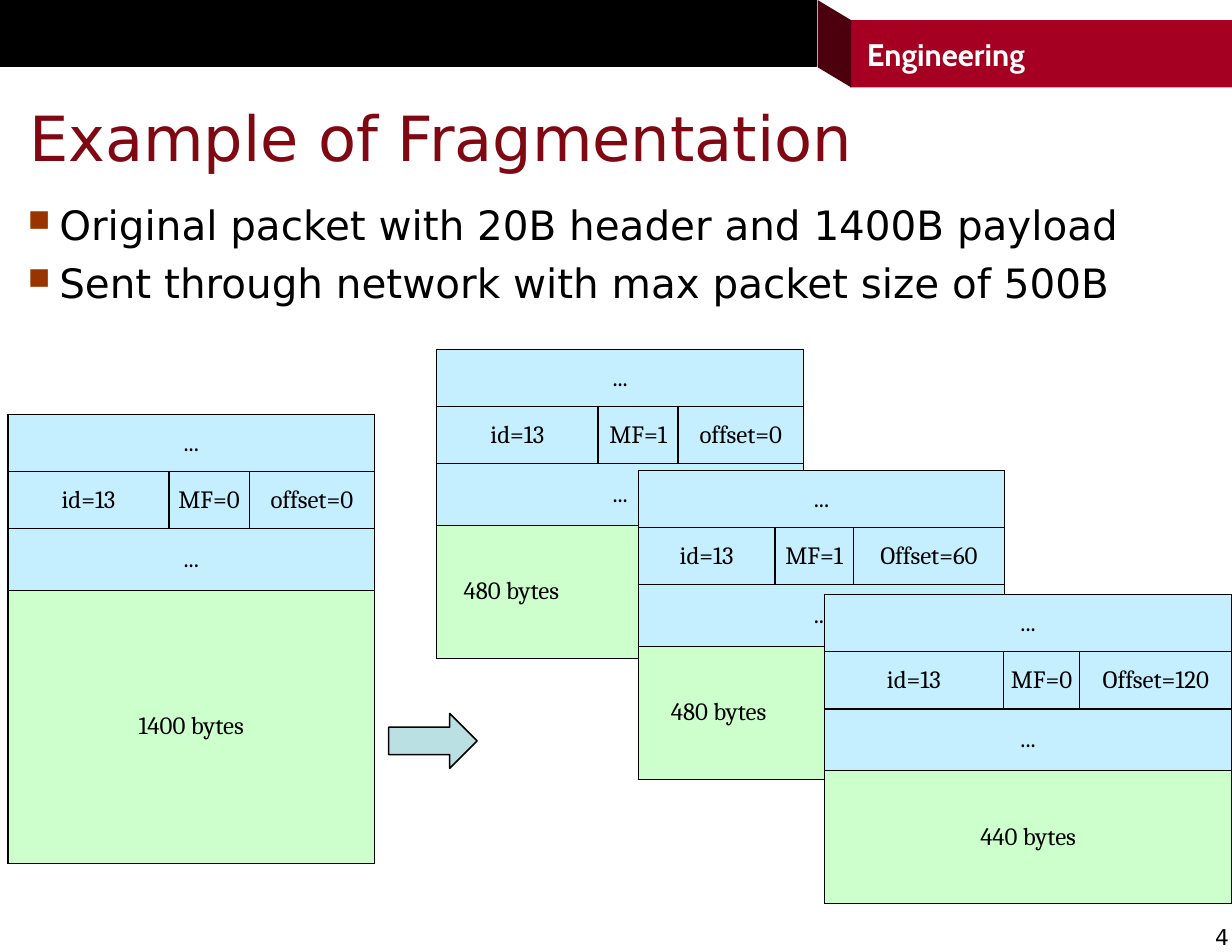
import pptx
import pptx.dml.color
import pptx.enum.shapes
import pptx.enum.text
import pptx.oxml
import pptx.oxml.ns
import pptx.util

COLUMNS, ROWS = 110, 85
SLIDE_WIDTH, SLIDE_HEIGHT = pptx.util.Inches(11), pptx.util.Inches(8.5)
BLACK, WHITE, CRIMSON, MAROON = "000000", "FFFFFF", "A50021", "4C000E"
TITLE_RED, BULLET_BROWN = "7F0813", "993300"
HEADER_BLUE, PAYLOAD_GREEN, ARROW_BLUE = "C5EEFF", "CCFFCC", "BBE0E3"
HEADER_ROWS = (5.1, 5.1, 5.5)

SHAPE = pptx.enum.shapes.MSO_SHAPE
ALIGN = pptx.enum.text.PP_ALIGN
MIDDLE = pptx.enum.text.MSO_ANCHOR.MIDDLE


def color(hex_string):
    return pptx.dml.color.RGBColor.from_string(hex_string)


def across(columns):
    return round(SLIDE_WIDTH * columns / COLUMNS)


def down(rows):
    return round(SLIDE_HEIGHT * rows / ROWS)


def place(left, top, width, height):
    return across(left), down(top), across(width), down(height)


def set_font(paragraph, name, size, hex_string, bold=False):
    font = paragraph.font
    font.name, font.size, font.bold = name, pptx.util.Pt(size), bold
    font.color.rgb = color(hex_string)


def set_margins(target, left, top, right, bottom):
    """Set the inner margins of a text frame or table cell in grid units."""
    target.margin_left, target.margin_right = across(left), across(right)
    target.margin_top, target.margin_bottom = down(top), down(bottom)


def add_preset(slide, preset, box, fill, line=None):
    shape = slide.shapes.add_shape(preset, *place(*box))
    shape.shadow.inherit = False
    shape.fill.solid()
    shape.fill.fore_color.rgb = color(fill)
    if line:
        shape.line.color.rgb = color(line)
        shape.line.width = pptx.util.Pt(1)
    else:
        shape.line.fill.background()
    return shape


def add_text_frame(slide, box, margins, wrap=True):
    frame = slide.shapes.add_textbox(*place(*box)).text_frame
    frame.word_wrap = wrap
    set_margins(frame, *margins)
    return frame


def add_banner(slide):
    add_preset(slide, SHAPE.RECTANGLE, (0, 0, 72.9, 5.9), BLACK, BLACK)
    label = add_preset(slide, SHAPE.RECTANGLE, (75.9, 1.8, 34.1, 6), CRIMSON)
    frame = label.text_frame
    frame.vertical_anchor = MIDDLE
    set_margins(frame, 1.5, 0.5, 1, 0.5)
    paragraph = frame.paragraphs[0]
    paragraph.text = "Engineering"
    paragraph.alignment = ALIGN.LEFT
    set_font(paragraph, "Cabin", 20, WHITE, bold=True)
    fold = add_preset(slide, SHAPE.PARALLELOGRAM, (70.6, 2.4, 7.8, 3), MAROON)
    fold.adjustments[0] = 0.6
    fold.rotation = 270


def add_title(slide, text):
    frame = add_text_frame(slide, (1.5, 7, 105.3, 10.4), (1.1, 0.6, 1.1, 0.6))
    frame.vertical_anchor = MIDDLE
    frame.paragraphs[0].text = text
    set_font(frame.paragraphs[0], "DejaVu Sans", 40, TITLE_RED)


def add_square_bullet(paragraph):
    properties = paragraph._p.get_or_add_pPr()
    properties.set("marL", str(across(4.2)))
    properties.set("indent", str(-across(2.8)))
    namespace = pptx.oxml.ns.nsdecls("a")
    for xml in (
        f'<a:buClr {namespace}><a:srgbClr val="{BULLET_BROWN}"/></a:buClr>',
        f'<a:buSzPct {namespace} val="75000"/>',
        f'<a:buChar {namespace} char="■"/>',
    ):
        properties.append(pptx.oxml.parse_xml(xml))


def add_bullets(slide, lines):
    frame = add_text_frame(slide, (0, 17.3, 110, 11), (1.1, 0.6, 1.1, 0.6))
    for index, line in enumerate(lines):
        paragraph = frame.add_paragraph() if index else frame.paragraphs[0]
        paragraph.text = line
        add_square_bullet(paragraph)
        paragraph.space_before = pptx.util.Pt(6 if index else 0)
        set_font(paragraph, "DejaVu Sans", 26, BLACK)


def add_borders(cell):
    properties = cell._tc.get_or_add_tcPr()
    for side in "LRTB":
        properties.append(pptx.oxml.parse_xml(
            f'<a:ln{side} {pptx.oxml.ns.nsdecls("a")} w="12700"><a:solidFill>'
            f'<a:srgbClr val="{BLACK}"/></a:solidFill></a:ln{side}>'))


def fill_cell(cell, text, fill, indent=0):
    """Write a cell, centred unless an indent from the left is given."""
    add_borders(cell)
    cell.fill.solid()
    cell.fill.fore_color.rgb = color(fill)
    cell.vertical_anchor = MIDDLE
    set_margins(cell, indent, 0, 0, 0)
    paragraph = cell.text_frame.paragraphs[0]
    paragraph.text = text
    paragraph.alignment = ALIGN.LEFT if indent else ALIGN.CENTER
    set_font(paragraph, "Cambria", 16, BLACK)


def add_packet(slide, left, top, widths, payload_height, fields, payload, indent=0):
    """Draw a packet: three header rows above its payload."""
    heights = (*HEADER_ROWS, payload_height)
    box = place(left, top, sum(widths), sum(heights))
    table = slide.shapes.add_table(len(heights), len(widths), *box).table
    table.first_row = table.horz_banding = False
    for column, width in zip(table.columns, widths):
        column.width = across(width)
    for row, height in zip(table.rows, heights):
        row.height = down(height)

    contents = (("...", "", ""), fields, ("...", "", ""), (payload, "", ""))
    for row, texts in enumerate(contents):
        is_payload = row == len(HEADER_ROWS)
        fill = PAYLOAD_GREEN if is_payload else HEADER_BLUE
        for column, text in enumerate(texts):
            fill_cell(table.cell(row, column), text, fill, indent if is_payload else 0)
        if texts is not fields:
            table.cell(row, 0).merge(table.cell(row, len(widths) - 1))


def add_page_number(slide, number):
    frame = add_text_frame(slide, (108.5, 82.4, 1.2, 2.4), (0, 0, 0, 0), wrap=False)
    frame.vertical_anchor = MIDDLE
    paragraph = frame.paragraphs[0]
    paragraph.text = number
    paragraph.alignment = ALIGN.RIGHT
    set_font(paragraph, "DejaVu Sans", 14, BLACK)


def main():
    presentation = pptx.Presentation()
    presentation.slide_width, presentation.slide_height = SLIDE_WIDTH, SLIDE_HEIGHT
    slide = presentation.slides.add_slide(presentation.slide_layouts[6])

    add_banner(slide)
    add_title(slide, "Example of Fragmentation")
    add_bullets(slide, (
        "Original packet with 20B header and 1400B payload",
        "Sent through network with max packet size of 500B",
    ))
    add_packet(slide, 0.7, 37, (14.4, 7.15, 11.2), 24.4,
               ("id=13", "MF=0", "offset=0"), "1400 bytes")
    add_packet(slide, 39, 31.2, (14.4, 7.15, 11.2), 11.9,
               ("id=13", "MF=1", "offset=0"), "480 bytes", indent=2.4)
    add_packet(slide, 57, 42, (12.2, 7, 13.5), 11.9,
               ("id=13", "MF=1", "Offset=60"), "480 bytes", indent=2.9)
    add_packet(slide, 73.6, 53.1, (16, 6.8, 13.6), 11.9,
               ("id=13", "MF=0", "Offset=120"), "440 bytes")
    add_preset(slide, SHAPE.RIGHT_ARROW, (34.7, 63.7, 7.9, 4.9), ARROW_BLUE, BLACK)
    add_page_number(slide, "4")
    presentation.save("out.pptx")


if __name__ == "__main__":
    main()
